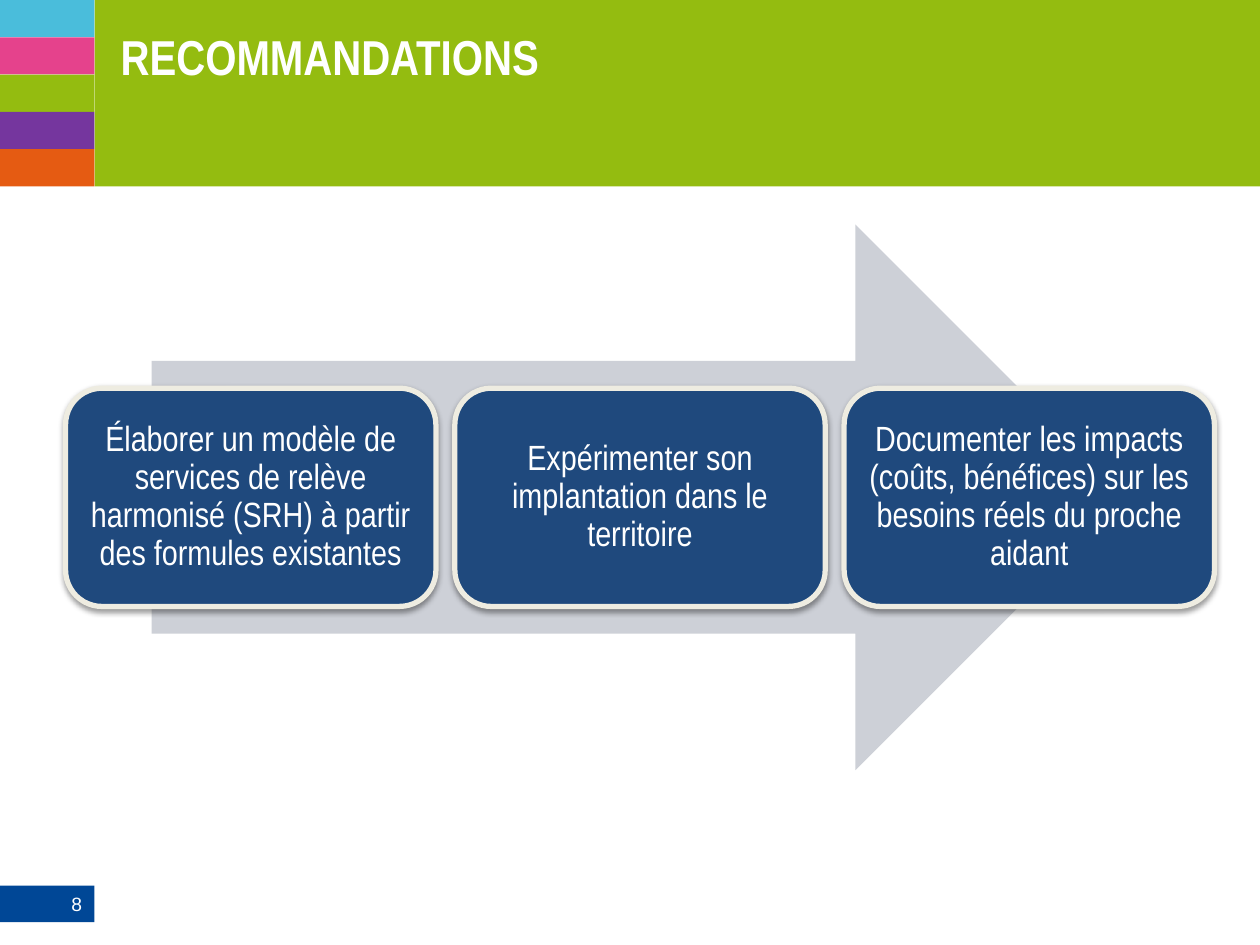
from dataclasses import dataclass

from lxml import etree
from pptx import Presentation
from pptx.dml.color import RGBColor
from pptx.enum import shapes, text
from pptx.oxml import ns
from pptx.util import Pt


@dataclass(frozen=True)
class Theme:
    """Colours, fonts and type sizes of the deck."""
    white: str = "FFFFFF"
    banner: str = "94BC10"
    footer: str = "004796"
    stripes: tuple = ("4ABDDB", "E5428C", "94BC10", "75369E", "E55B12")
    arrow: str = "CDD0D7"
    card: str = "1F497D"
    card_edge: str = "EEECE1"
    shadow: str = "000000"
    heading_font: str = "Arial Narrow"
    number_font: str = "Arial"
    title_size: int = 28
    card_size: int = 20
    number_size: int = 11


THEME = Theme()
RECOMMENDATIONS = (
    "Élaborer un modèle de services de relève harmonisé (SRH) à partir des formules existantes",
    "Expérimenter son implantation dans le territoire",
    "Documenter les impacts (coûts, bénéfices) sur les besoins réels du proche aidant",
)


def apply(target, formats):
    """Set every attribute of a format dict on the target."""
    for name, value in formats.items():
        setattr(target, name, value)


def add_block(slide, preset, box, fill):
    """Add a flat, borderless preset shape."""
    block = slide.shapes.add_shape(preset, *map(Pt, box))
    block.shadow.inherit = False
    block.fill.solid()
    block.fill.fore_color.rgb = RGBColor.from_string(fill)
    block.line.fill.background()
    return block


def write(holder, words, size, font, align, anchor, inset=None, **font_formats):
    """Write one white paragraph into a shape or text box."""
    frame = holder.text_frame
    apply(frame, {"word_wrap": True, "vertical_anchor": anchor})
    if inset is not None:
        sides = ("left", "top", "right", "bottom")
        apply(frame, {f"margin_{side}": Pt(inset) for side in sides})
    paragraph = frame.paragraphs[0]
    paragraph.text = words
    paragraph.alignment = align
    apply(paragraph.font, {"size": Pt(size), "name": font, **font_formats})
    paragraph.font.color.rgb = RGBColor.from_string(THEME.white)
    return paragraph


def add_soft_shadow(card):
    """Cast a soft shadow straight below a card."""
    effects = card._element.spPr.find(ns.qn("a:effectLst"))
    shadow = etree.SubElement(effects, ns.qn("a:outerShdw"), blurRad=str(Pt(3.1)),
                              dist=str(Pt(1.6)), dir="5400000", rotWithShape="0")
    colour = etree.SubElement(shadow, ns.qn("a:srgbClr"), val=THEME.shadow)
    etree.SubElement(colour, ns.qn("a:alpha"), val="38000")


def build_header(slide, left, top, width, height, stripe_width=54):
    """Draw the stripes, the green banner and the title."""
    rectangle = shapes.MSO_SHAPE.RECTANGLE
    banner_left = left + stripe_width
    add_block(slide, rectangle, (banner_left, top, width - stripe_width, height), THEME.banner)
    stripe_height = height / len(THEME.stripes)
    for row, colour in enumerate(THEME.stripes):
        stripe_top = top + row * stripe_height
        add_block(slide, rectangle, (left, stripe_top, stripe_width, stripe_height), colour)
    title = slide.shapes.add_textbox(Pt(banner_left + 15), Pt(top + 15), Pt(410), Pt(61))
    write(title, "RECOMMANDATIONS", THEME.title_size, THEME.heading_font,
          text.PP_ALIGN.LEFT, text.MSO_ANCHOR.TOP, inset=0, bold=True)


def build_page_number(slide, left, top, width, height):
    """Draw the page number tab."""
    tab = add_block(slide, shapes.MSO_SHAPE.RECTANGLE, (left, top, width, height), THEME.footer)
    write(tab, "8", THEME.number_size, THEME.number_font,
          text.PP_ALIGN.RIGHT, text.MSO_ANCHOR.MIDDLE)


def build_process(slide, left, top, width, height, gap=10.8):
    """Draw the arrow with a row of recommendation cards across it."""
    arrow_width = width * 0.85
    arrow_left = left + (width - arrow_width) / 2
    add_block(slide, shapes.MSO_SHAPE.RIGHT_ARROW,
              (arrow_left, top, arrow_width, height), THEME.arrow)
    count = len(RECOMMENDATIONS)
    card_width = (width - gap * (count - 1)) / count
    card_height = height * 0.4
    card_top = top + (height - card_height) / 2
    for column, recommendation in enumerate(RECOMMENDATIONS):
        card_left = left + column * (card_width + gap)
        card = add_block(slide, shapes.MSO_SHAPE.ROUNDED_RECTANGLE,
                         (card_left, card_top, card_width, card_height), THEME.card)
        card.line.color.rgb = RGBColor.from_string(THEME.card_edge)
        card.line.width = Pt(3)
        add_soft_shadow(card)
        paragraph = write(card, recommendation, THEME.card_size, THEME.heading_font,
                          text.PP_ALIGN.CENTER, text.MSO_ANCHOR.MIDDLE, inset=6)
        paragraph.line_spacing = 0.9


def main():
    """Build and save the slide."""
    deck = Presentation()
    apply(deck, {"slide_width": Pt(720), "slide_height": Pt(540)})
    slide = deck.slides.add_slide(deck.slide_layouts[6])
    build_header(slide, 0, 0, 720, 106.5)
    build_page_number(slide, 0, 506, 54, 21)
    build_process(slide, 37.5, 128.3, 656.5, 311.8)
    deck.save("out.pptx")


if __name__ == "__main__":
    main()
